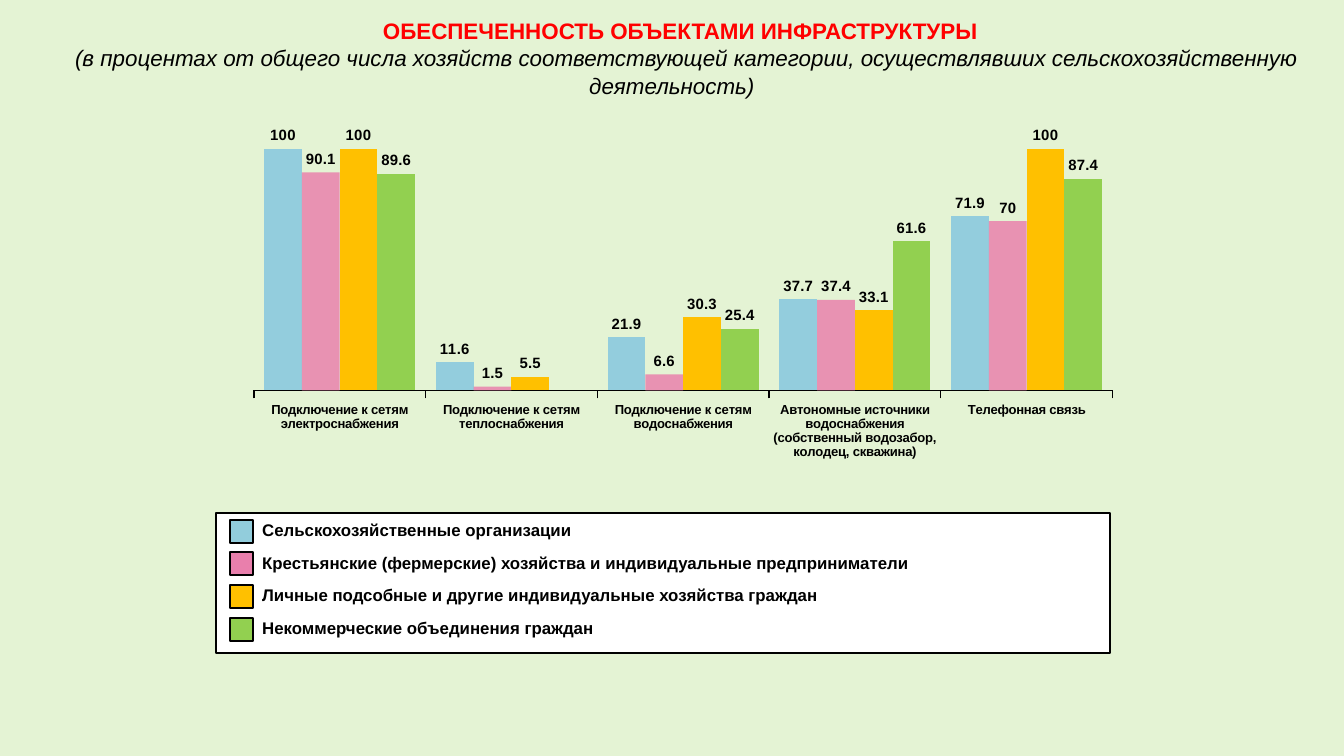
from dataclasses import dataclass

from lxml import etree
from pptx import Presentation
from pptx.chart.data import CategoryChartData
from pptx.dml.color import RGBColor
from pptx.enum.chart import XL_CHART_TYPE, XL_LABEL_POSITION, XL_TICK_MARK
from pptx.enum.shapes import MSO_SHAPE
from pptx.enum.text import MSO_ANCHOR, PP_ALIGN
from pptx.oxml.ns import qn
from pptx.util import Emu, Pt

COLUMNS = XL_CHART_TYPE.COLUMN_CLUSTERED
OUTSIDE_END = XL_LABEL_POSITION.OUTSIDE_END
TICK_OUT, TICK_NONE = XL_TICK_MARK.OUTSIDE, XL_TICK_MARK.NONE
RECT = MSO_SHAPE.RECTANGLE
TOP, MIDDLE = MSO_ANCHOR.TOP, MSO_ANCHOR.MIDDLE
LEFT, CENTER = PP_ALIGN.LEFT, PP_ALIGN.CENTER


def px(n):
    return Emu(round(n * 914400 / 134.4))


@dataclass(frozen=True)
class Theme:
    font: str = "Arial"
    back: str = "E4F3D4"
    ink: str = "000000"
    paper: str = "FFFFFF"
    accent: str = "FF0000"
    title: int = 12
    legend: int = 9
    value: int = 8
    category: int = 7
    line: float = 0.75


THEME = Theme()

CATEGORIES = [
    "Подключение к сетям электроснабжения",
    "Подключение к сетям теплоснабжения",
    "Подключение к сетям водоснабжения",
    "Автономные источники водоснабжения (собственный водозабор, колодец, скважина)",
    "Телефонная связь",
]

# name, values, column colour, opacity in percent, legend swatch colour
SERIES = [
    ("Сельскохозяйственные организации",
     (100, 11.6, 21.9, 37.7, 71.9), "93CDDD", 100, "92CDDC"),
    ("Крестьянские (фермерские) хозяйства и индивидуальные предприниматели",
     (90.1, 1.5, 6.6, 37.4, 70), "E97FAC", 83, "E97FAC"),
    ("Личные подсобные и другие индивидуальные хозяйства граждан",
     (100, 5.5, 30.3, 33.1, 100), "FFC000", 100, "FFC000"),
    ("Некоммерческие объединения граждан",
     (89.6, None, 25.4, 61.6, 87.4), "92D050", 100, "92D050"),
]


def style_font(font, size, color, bold=False, italic=False):
    font.name = THEME.font
    font.size = Pt(size)
    font.bold = bold
    font.italic = italic
    font.color.rgb = RGBColor.from_string(color)


def add_text(tf, text, first=False, size=12, color=THEME.ink, bold=False,
             italic=False, align=LEFT, margin=0, indent=0, line=None, after=0):
    p = tf.paragraphs[0] if first else tf.add_paragraph()
    p.alignment = align
    p.line_spacing = Pt(line) if line else None
    p.space_after = Pt(after)
    pPr = p._p.get_or_add_pPr()
    pPr.set("marL", str(px(margin)))
    pPr.set("indent", str(px(indent)))
    r = p.add_run()
    r.text = text
    style_font(r.font, size, color, bold, italic)


class SlideBuilder:
    def __init__(self, prs, theme):
        self.theme = theme
        self.s = prs.slides.add_slide(prs.slide_layouts[6])
        fill = self.s.background.fill
        fill.solid()
        fill.fore_color.rgb = RGBColor.from_string(theme.back)

    def text_box(self, x, y, w, h, anchor):
        tf = self.s.shapes.add_textbox(px(x), px(y), px(w), px(h)).text_frame
        tf.word_wrap = True
        tf.vertical_anchor = anchor
        return tf

    def rect(self, x, y, w, h, color):
        sp = self.s.shapes.add_shape(RECT, px(x), px(y), px(w), px(h))
        sp.shadow.inherit = False
        sp.fill.solid()
        sp.fill.fore_color.rgb = RGBColor.from_string(color)
        sp.line.color.rgb = RGBColor.from_string(self.theme.ink)
        sp.line.width = Pt(self.theme.line)
        tf = sp.text_frame
        tf.word_wrap = True
        tf.vertical_anchor = TOP
        return tf

    def column_chart(self, x, y, w, h, plot):
        t = self.theme
        data = CategoryChartData()
        data.categories = CATEGORIES
        for name, values, *_ in SERIES:
            data.add_series(name, values)
        chart = self.s.shapes.add_chart(
            COLUMNS, px(x), px(y), px(w), px(h), data).chart
        chart.has_legend = False
        chart.has_title = False
        style_font(chart.font, t.value, t.ink)

        # Axes
        cat, val = chart.category_axis, chart.value_axis
        cat.major_tick_mark = TICK_OUT
        cat.minor_tick_mark = TICK_NONE
        cat.format.line.color.rgb = RGBColor.from_string(t.ink)
        cat.format.line.width = Pt(t.line)
        style_font(cat.tick_labels.font, t.category, t.ink, bold=True)
        val.minimum_scale, val.maximum_scale = 0, 120
        val.has_major_gridlines = False
        val.visible = False

        # Columns and value labels
        bars = chart.plots[0]
        bars.gap_width, bars.overlap = 55, 0
        bars.vary_by_categories = False
        for ser, (_, _, color, opacity, _) in zip(bars.series, SERIES):
            ser.invert_if_negative = False
            ser.format.fill.solid()
            ser.format.fill.fore_color.rgb = RGBColor.from_string(color)
            if opacity < 100:
                clr = ser.format.fill._xPr.find(".//" + qn("a:srgbClr"))
                etree.SubElement(clr, qn("a:alpha"), val=str(opacity * 1000))
            labels = ser.data_labels
            labels.show_value = True
            labels.position = OUTSIDE_END
            style_font(labels.font, t.value, t.ink, bold=True)

        # Inner plot area as fractions of the chart
        area = chart._chartSpace.find(".//" + qn("c:plotArea"))
        for old in area.findall(qn("c:layout")):
            area.remove(old)
        layout = etree.Element(qn("c:layout"))
        area.insert(0, layout)
        manual = etree.SubElement(layout, qn("c:manualLayout"))
        settings = [("layoutTarget", "inner"), ("xMode", "edge"), ("yMode", "edge")]
        for tag, value in settings + list(zip("xywh", plot)):
            etree.SubElement(manual, qn("c:" + tag), val=str(value))


def main():
    prs = Presentation()
    prs.slide_width, prs.slide_height = px(1344), px(756)
    slide = SlideBuilder(prs, THEME)

    # Title
    tf = slide.text_box(0, 8, 1344, 100, MIDDLE)
    common = dict(size=THEME.title, align=CENTER, line=14.5)
    add_text(tf, "ОБЕСПЕЧЕННОСТЬ ОБЪЕКТАМИ ИНФРАСТРУКТУРЫ", first=True,
             color=THEME.accent, bold=True, margin=17, **common)
    add_text(tf, "(в процентах от общего числа хозяйств соответствующей категории, "
             "осуществлявших сельскохозяйственную деятельность)",
             italic=True, indent=30, **common)

    # Chart
    slide.column_chart(196, 77, 965, 387, (0.06, 0.06, 0.89, 0.75))

    # Legend
    tf = slide.rect(216, 513, 894, 140, THEME.paper)
    for i, (name, _, _, _, swatch) in enumerate(SERIES):
        add_text(tf, name, first=i == 0, size=THEME.legend, bold=True,
                 margin=33, line=11, after=6.5)
        slide.rect(230, 520 + i * 98 // 3, 23, 23, swatch)

    prs.save("out.pptx")


if __name__ == "__main__":
    main()
